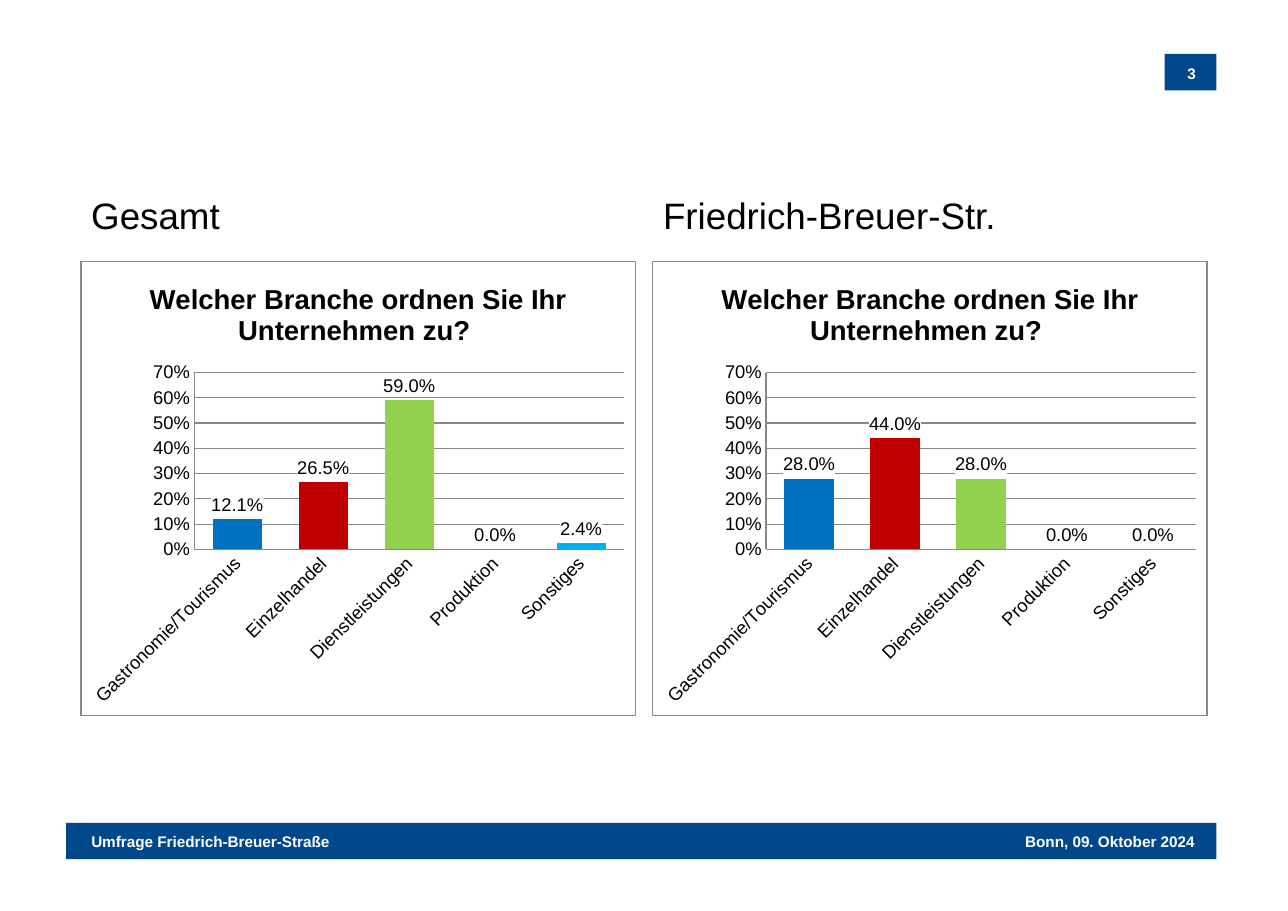
"""Build the survey slide with two column charts on the trades of the firms."""
import pptx
import pptx.chart.data
import pptx.dml.color
import pptx.enum.chart
import pptx.enum.shapes
import pptx.enum.text
import pptx.oxml
import pptx.oxml.ns
import pptx.util

Inches, Pt = pptx.util.Inches, pptx.util.Pt
ALIGN = pptx.enum.text.PP_ALIGN
ENUM = pptx.enum.chart

TRADES = ["Gastronomie/Tourismus", "Einzelhandel", "Dienstleistungen",
          "Produktion", "Sonstiges"]
HUES = ["0070C0", "C00000", "92D050", "7030A0", "00B0F0"]
ASK = "Welcher Branche ordnen Sie Ihr Unternehmen zu? "
PANELS = [("Gesamt", [0.121, 0.265, 0.59, 0, 0.024]),
          ("Friedrich-Breuer-Str.", [0.28, 0.44, 0.28, 0, 0])]
BARS = [(10.57, 0.49, 0.47, 0.33), (0.6, 7.47, 10.44, 0.33)]
NOTES = [((0.73, 7.51, 2.39, 0.27), "Umfrage Friedrich-Breuer-Straße", ALIGN.LEFT),
         ((9.19, 7.51, 1.75, 0.27), "Bonn, 09. Oktober 2024", ALIGN.RIGHT),
         ((10.56, 0.53, 0.51, 0.27), "3", ALIGN.CENTER)]
NAVY, WHITE, BLACK, GREY = "01488A", "FFFFFF", "000000", "888888"
LEFT, STEP, TOP = 0.73, 5.19, 2.37
WIDE, HIGH = 5.04, 4.13
PLOT = {"x": 1.03 / WIDE, "y": 1.01 / HIGH, "w": 3.91 / WIDE, "h": 1.61 / HIGH}

SMALL = {"name": "Arial", "size": Pt(10), "bold": True}
HEAD = {"name": "Arial", "size": Pt(24), "bold": False}
TITLE = {"name": "Arial", "size": Pt(18), "bold": True}
TICK = {"name": "Arial", "size": Pt(12), "bold": False}
AXIS = {"major_tick_mark": ENUM.XL_TICK_MARK.NONE,
        "minor_tick_mark": ENUM.XL_TICK_MARK.NONE}
SCALE = {"minimum_scale": 0, "maximum_scale": 0.7, "major_unit": 0.1,
         "has_major_gridlines": True}
LABELS = {"show_value": True, "number_format": "0.0%",
          "number_format_is_linked": False,
          "position": ENUM.XL_LABEL_POSITION.OUTSIDE_END}


def put(item, form):
    for key, value in form.items():
        setattr(item, key, value)


def tint(item, hue):
    item.rgb = pptx.dml.color.RGBColor.from_string(hue)


def style(font, form, hue):
    put(font, form)
    tint(font.color, hue)


def paint(fill, hue):
    fill.solid()
    tint(fill.fore_color, hue)


def rule(line):
    line.width = Pt(0.75)
    tint(line.color, GREY)


def write(frame, text, form, hue, align):
    para = frame.paragraphs[0]
    para.text, para.alignment = text, align
    style(para.font, form, hue)


def label(slide, area, text, form, hue, align, wrap):
    frame = slide.shapes.add_textbox(*map(Inches, area)).text_frame
    frame.word_wrap = wrap
    write(frame, text, form, hue, align)


def node(body):
    space = pptx.oxml.ns.nsdecls("c", "a")
    tag, rest = body.split(">", 1)
    return pptx.oxml.parse_xml(f"{tag} {space}>{rest}")


def panel(line):
    return node(f'<c:spPr><a:solidFill><a:srgbClr val="{WHITE}"/></a:solidFill>'
                f'{line}</c:spPr>')


def dress(chart):
    root = chart._chartSpace
    edge = (f'<a:ln w="9525"><a:solidFill><a:srgbClr val="{GREY}"/>'
            '</a:solidFill></a:ln>')
    root.chart.addnext(panel(edge))
    area = root.chart.plotArea
    for old in area.xpath("c:layout"):
        area.remove(old)
    spots = "".join(f'<c:{key} val="{size}"/>' for key, size in PLOT.items())
    area.insert(0, node('<c:layout><c:manualLayout><c:layoutTarget val="inner"/>'
                        '<c:xMode val="edge"/><c:yMode val="edge"/>'
                        f'{spots}</c:manualLayout></c:layout>'))
    area.append(panel("<a:ln><a:noFill/></a:ln>"))
    root.xpath(".//c:dLbls/c:numFmt")[0].addnext(panel("<a:ln><a:noFill/></a:ln>"))
    root.xpath(".//c:catAx/c:txPr/a:bodyPr")[0].set("rot", "-2700000")


def graph(slide, left, shares):
    data = pptx.chart.data.CategoryChartData(number_format="0.0%")
    data.categories = TRADES
    data.add_series("Series 1", shares)
    chart = slide.shapes.add_chart(
        ENUM.XL_CHART_TYPE.COLUMN_CLUSTERED,
        *map(Inches, (left, TOP, WIDE, HIGH)), data).chart
    style(chart.font, {"name": "Arial", "size": Pt(10)}, BLACK)
    chart.has_legend = False
    write(chart.chart_title.text_frame, ASK, TITLE, BLACK, ALIGN.CENTER)
    chart.chart_title.include_in_layout = False
    for axis in (chart.category_axis, chart.value_axis):
        put(axis, AXIS)
        style(axis.tick_labels.font, TICK, BLACK)
        rule(axis.format.line)
    axis = chart.value_axis
    put(axis, SCALE)
    put(axis.tick_labels, {"number_format": "0%", "number_format_is_linked": False})
    rule(axis.major_gridlines.format.line)
    plot = chart.plots[0]
    put(plot, {"gap_width": 75, "vary_by_categories": False,
               "has_data_labels": True})
    put(plot.data_labels, LABELS)
    style(plot.data_labels.font, TICK, BLACK)
    bars = plot.series[0]
    paint(bars.format.fill, "BBE0E3")
    for rank, hue in enumerate(HUES):
        paint(bars.points[rank].format.fill, hue)
    dress(chart)


def main():
    deck = pptx.Presentation()
    put(deck, {"slide_width": Inches(11.69), "slide_height": Inches(8.27)})
    slide = deck.slides.add_slide(deck.slide_layouts[6])
    for area in BARS:
        bar = slide.shapes.add_shape(pptx.enum.shapes.MSO_SHAPE.RECTANGLE,
                                     *map(Inches, area))
        bar.shadow.inherit = False
        paint(bar.fill, NAVY)
        bar.line.fill.background()
    for area, text, align in NOTES:
        label(slide, area, text, SMALL, WHITE, align, False)
    for rank, (name, shares) in enumerate(PANELS):
        left = LEFT + rank * STEP
        graph(slide, left, shares)
        label(slide, (left, 1.7, 3.54, 0.5), name, HEAD, BLACK, ALIGN.LEFT, True)
    deck.save("out.pptx")


if __name__ == "__main__":
    main()
